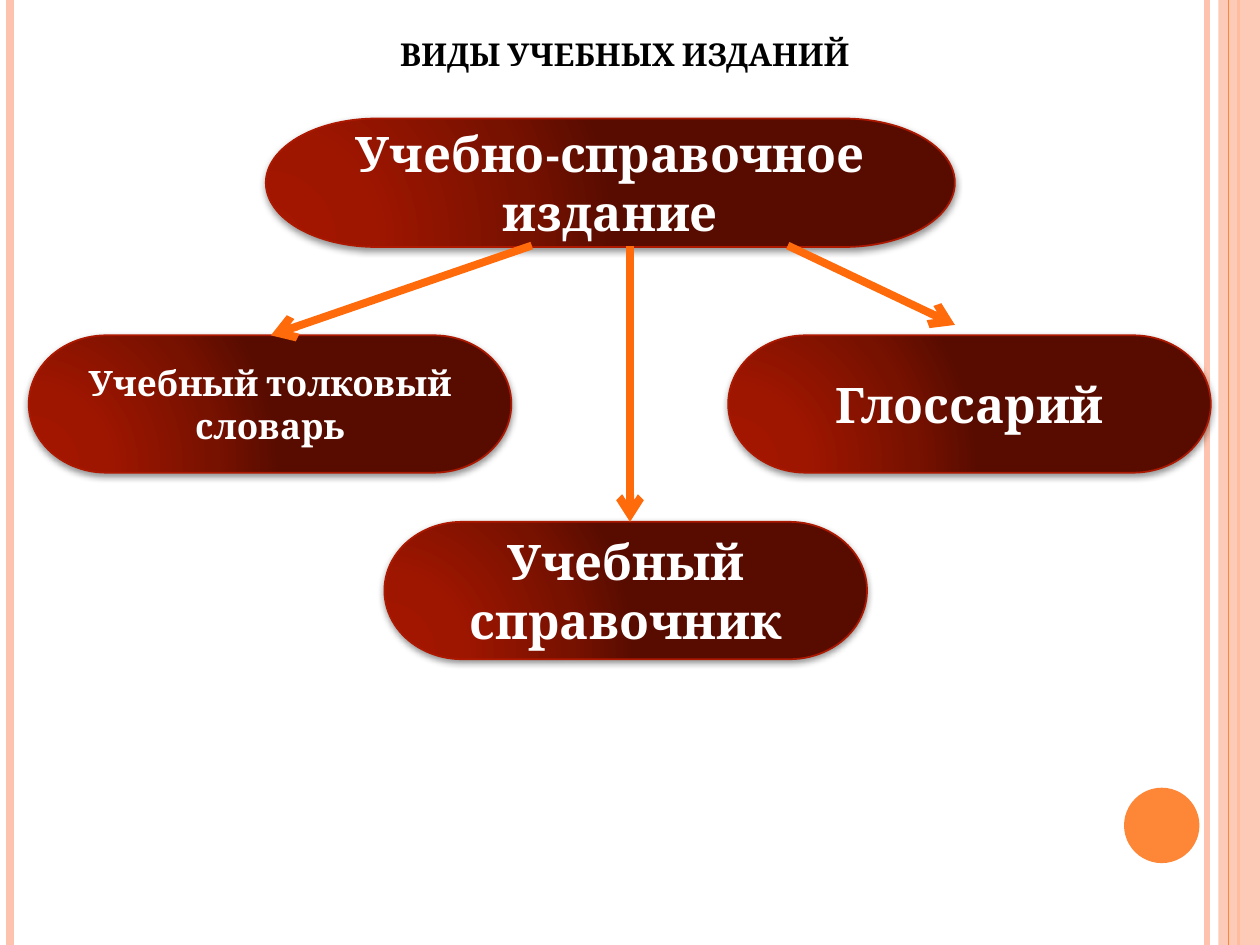
from lxml import etree
from pptx import Presentation
from pptx.dml.color import RGBColor
from pptx.enum.shapes import MSO_CONNECTOR, MSO_SHAPE
from pptx.enum.text import MSO_ANCHOR, MSO_AUTO_SIZE, PP_ALIGN
from pptx.oxml import parse_xml
from pptx.oxml.ns import nsdecls, qn
from pptx.util import Cm, Pt


def rgb(hex_code):
    return RGBColor.from_string(hex_code)


def add_line(x1, y1, x2, y2, color, width):
    line = slide.shapes.add_connector(
        MSO_CONNECTOR.STRAIGHT, Cm(x1), Cm(y1), Cm(x2), Cm(y2))
    line.line.color.rgb = rgb(color)
    line.line.width = Pt(width)
    etree.SubElement(line._element.spPr, qn("a:effectLst"))
    return line


prs = Presentation()
prs.slide_width, prs.slide_height = Cm(25.4), Cm(19.05)
slide = prs.slides.add_slide(prs.slide_layouts[5])

# Side stripes, band and circle
stripes = [(24.33, "FEC3AE", 3), (0.2, "FEC3AE", 4.5), (24.97, "FE8637", 1.5)]
for x, color, width in stripes:
    add_line(x, 0, x, 19.05, color, width)

band = slide.shapes.add_shape(MSO_SHAPE.RECTANGLE, Cm(24.56), 0, Cm(0.84), Cm(19.05))
circle = slide.shapes.add_shape(MSO_SHAPE.OVAL, Cm(22.66), Cm(15.88), Cm(1.52), Cm(1.52))
for decoration, color in [(band, "FEC3AE"), (circle, "FE8637")]:
    decoration.shadow.inherit = False
    decoration.fill.solid()
    decoration.fill.fore_color.rgb = rgb(color)
    decoration.line.fill.background()
band_color = band._element.spPr.find(qn("a:solidFill"))[0]
etree.SubElement(band_color, qn("a:alpha"), val="87000")
add_line(24.77, 0, 24.77, 19.05, "FE8637", 0.75)

# Title
title = slide.shapes.title
title.left, title.top, title.width, title.height = Cm(4.37), Cm(0.58), Cm(16.46), Cm(1.02)
title.text_frame.text = "ВИДЫ УЧЕБНЫХ ИЗДАНИЙ"
title.text_frame.auto_size = MSO_AUTO_SIZE.NONE
heading = title.text_frame.paragraphs[0]
heading.alignment = PP_ALIGN.CENTER
heading.runs[0].font.name = "Cambria"
heading.runs[0].font.size = Pt(18)
heading.runs[0].font.bold = True
heading.runs[0].font.color.rgb = rgb("000000")

# Edition types: the general one on top, its three kinds below
stops = [(0, "A41700"), (30, "9F1600"), (75, "771100"), (100, "580C00")]
stop_xml = "".join(
    f'<a:gs pos="{position * 1000}"><a:srgbClr val="{color}"/></a:gs>'
    for position, color in stops)
gradient_xml = (
    f'<a:gradFill {nsdecls("a")} rotWithShape="1"><a:gsLst>{stop_xml}</a:gsLst>'
    '<a:path path="circle"><a:fillToRect l="5000" t="100000" r="120000" b="10000"/>'
    '</a:path></a:gradFill>')
shadow_xml = (
    f'<a:outerShdw {nsdecls("a")} blurRad="50800" dist="20320" dir="5400000" '
    'rotWithShape="0"><a:srgbClr val="000000"><a:alpha val="42000"/></a:srgbClr>'
    '</a:outerShdw>')

kind_size = (9.73, 2.77)
editions = [
    ("Учебно-справочное издание", 5.36, 2.39, (13.89, 2.59), 28),
    ("Учебный толковый словарь", 0.58, 6.76, kind_size, 20),
    ("Учебный справочник", 7.75, 10.52, kind_size, 28),
    ("Глоссарий", 14.68, 6.76, kind_size, 28),
]
for label, x, y, (width, height), font_size in editions:
    edition = slide.shapes.add_shape(
        MSO_SHAPE.FLOWCHART_TERMINATOR, Cm(x), Cm(y), Cm(width), Cm(height))
    edition.line.color.rgb = rgb("AC1800")
    edition.line.width = Pt(1)
    edition.fill.gradient()
    edition.shadow.inherit = False
    properties = edition._element.spPr
    properties.replace(properties.find(qn("a:gradFill")), parse_xml(gradient_xml))
    properties.find(qn("a:effectLst")).append(parse_xml(shadow_xml))

    edition.text_frame.text = label
    edition.text_frame.word_wrap = True
    edition.text_frame.vertical_anchor = MSO_ANCHOR.MIDDLE
    paragraph = edition.text_frame.paragraphs[0]
    paragraph.alignment = PP_ALIGN.CENTER
    font = paragraph.runs[0].font
    font.name, font.size, font.bold = "Cambria", Pt(font_size), True
    font.color.rgb = rgb("FFFFFF")

# Arrows from the general type to its kinds
arrow_ends = [(15.88, 19.25, 6.55), (12.7, 12.7, 10.52), (10.72, 5.46, 6.76)]
for start_x, end_x, end_y in arrow_ends:
    arrow = add_line(start_x, 4.95, end_x, end_y, "FF6B0A", 4.5)
    etree.SubElement(arrow.line._get_or_add_ln(), qn("a:tailEnd"), type="arrow")

prs.save("out.pptx")
